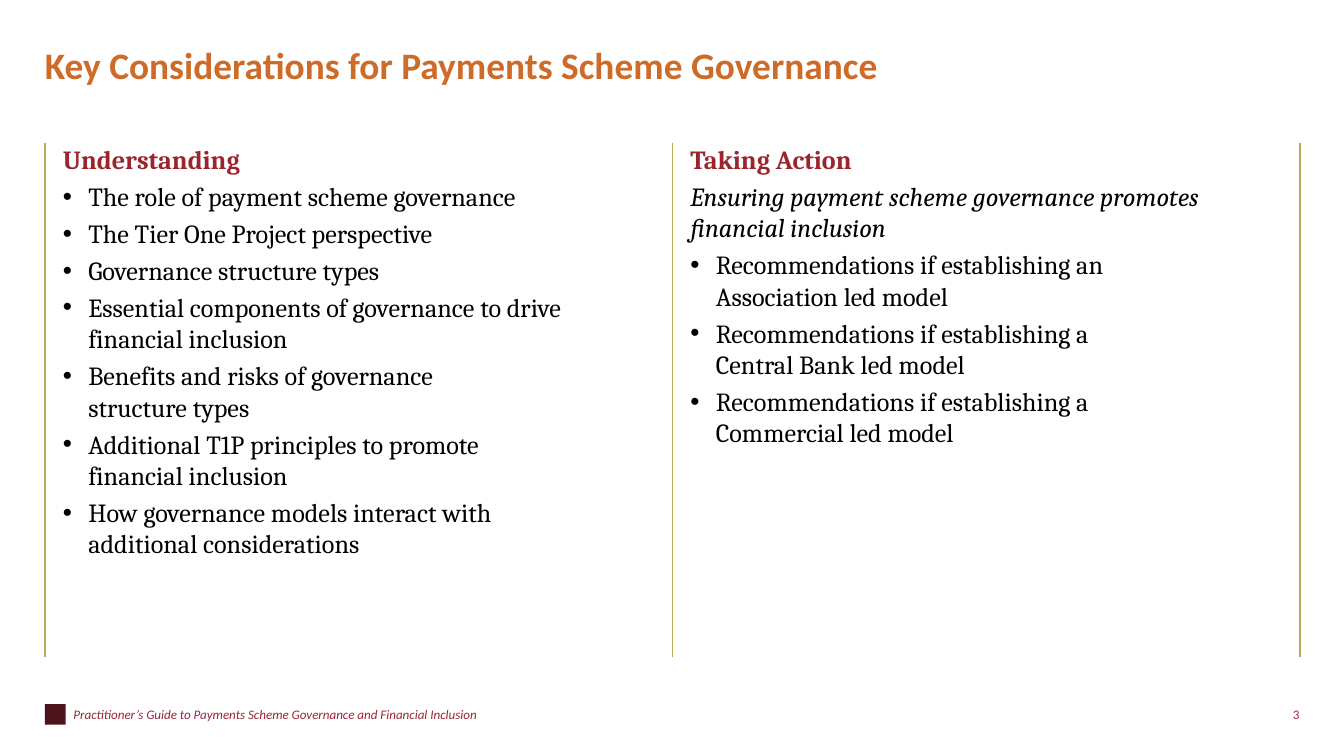
import pptx
import pptx.dml.color
import pptx.enum.shapes
import pptx.enum.text
import pptx.oxml
import pptx.oxml.ns
import pptx.util

Cm = pptx.util.Cm
Pt = pptx.util.Pt
ALIGN = pptx.enum.text.PP_ALIGN
ANCHOR = pptx.enum.text.MSO_ANCHOR


def rgb(hex_code):
    return pptx.dml.color.RGBColor.from_string(hex_code)


def write(paragraph, text, font="Calibri", size=7, color="98273B",
          bold=False, italic=False, align=ALIGN.LEFT, after=0, bullet=False):
    """Fill a paragraph; a newline in the text becomes a line break."""
    paragraph.text = text
    paragraph.alignment = align
    paragraph.space_after = Pt(after)
    for run in paragraph.runs:
        run.font.name = font
        run.font.size = Pt(size)
        run.font.bold = bold
        run.font.italic = italic
        run.font.color.rgb = rgb(color)
    if bullet:
        properties = paragraph._p.get_or_add_pPr()
        properties.set("marL", str(Cm(0.48)))
        properties.set("indent", str(-Cm(0.48)))
        for tag, key, value in (("a:buFont", "typeface", "Arial"),
                                ("a:buChar", "char", "•")):
            mark = pptx.oxml.parse_xml(
                f'<{tag} {pptx.oxml.ns.nsdecls("a")} {key}="{value}"/>')
            properties.append(mark)


class GuideSlide:
    title_color = "CE6B29"
    heading_color = "9B242D"
    body_color = "000000"
    rule_color = "BAAA58"
    square_color = "4C141D"
    body = dict(font="Cambria", size=14, after=3)

    def __init__(self, deck):
        self.slide = deck.slides.add_slide(deck.slide_layouts[6])

    def box(self, left, top, width, height, anchor=ANCHOR.MIDDLE,
            right=0, bottom=0):
        frame = self.slide.shapes.add_textbox(
            Cm(left), Cm(top), Cm(width), Cm(height)).text_frame
        frame.word_wrap = True
        frame.vertical_anchor = anchor
        frame.margin_left = frame.margin_top = 0
        frame.margin_right, frame.margin_bottom = Cm(right), Cm(bottom)
        return frame

    def label(self, text, left, top, width, height, **style):
        write(self.box(left, top, width, height).paragraphs[0], text, **style)

    def square(self, left, top, side):
        square = self.slide.shapes.add_shape(
            pptx.enum.shapes.MSO_SHAPE.RECTANGLE,
            Cm(left), Cm(top), Cm(side), Cm(side))
        square.shadow.inherit = False
        square.fill.solid()
        square.fill.fore_color.rgb = rgb(self.square_color)
        square.line.fill.background()

    def rule(self, x, top, height):
        line = self.slide.shapes.add_connector(
            pptx.enum.shapes.MSO_CONNECTOR.STRAIGHT,
            Cm(x), Cm(top), Cm(x), Cm(top + height))
        line.line.color.rgb = rgb(self.rule_color)
        line.line.width = Pt(1)
        line._element.spPr.append(pptx.oxml.parse_xml(
            f'<a:effectLst {pptx.oxml.ns.nsdecls("a")}/>'))

    def column(self, heading, lead, points, left, top, width, height):
        frame = self.box(left, top, width, height, ANCHOR.TOP,
                         right=0.25, bottom=0.13)
        write(frame.paragraphs[0], heading, color=self.heading_color,
              bold=True, **self.body)
        if lead:
            write(frame.add_paragraph(), lead, color=self.body_color,
                  italic=True, **self.body)
        for point in points:
            write(frame.add_paragraph(), point, color=self.body_color,
                  bullet=True, **self.body)


COLUMNS = [
    ("Understanding", None, [
        "The role of payment scheme governance",
        "The Tier One Project perspective",
        "Governance structure types",
        "Essential components of governance to drive financial inclusion",
        "Benefits and risks of governance \nstructure types",
        "Additional T1P principles to promote \nfinancial inclusion",
        "How governance models interact with additional considerations",
    ]),
    ("Taking Action",
     "Ensuring payment scheme governance promotes financial inclusion", [
         "Recommendations if establishing an Association led model",
         "Recommendations if establishing a \nCentral Bank led model",
         "Recommendations if establishing a Commercial led model",
     ]),
]
MARGIN, PITCH = 0.85, 11.86
TOP, HEIGHT = 2.71, 9.7


def main():
    deck = pptx.Presentation()
    deck.slide_width, deck.slide_height = Cm(25.4), Cm(14.29)
    page = GuideSlide(deck)

    # Title
    page.label("Key Considerations for Payments Scheme Governance",
               MARGIN, 0.79, 23.27, 0.86,
               size=20, color=page.title_color, bold=True)

    # Columns and the rules that bound them
    for index, (heading, lead, points) in enumerate(COLUMNS):
        page.column(heading, lead, points,
                    MARGIN + index * PITCH + 0.34, TOP, 10.13, HEIGHT)
    for index in range(len(COLUMNS) + 1):
        page.rule(MARGIN + index * PITCH, TOP, HEIGHT)

    # Footer
    page.square(MARGIN, 13.31, 0.39)
    page.label("Practitioner’s Guide to Payments Scheme Governance "
               "and Financial Inclusion", 1.39, 13.35, 8.59, 0.3, italic=True)
    page.label("3", 23.7, 13.35, 0.86, 0.3, align=ALIGN.RIGHT)

    deck.save("out.pptx")


if __name__ == "__main__":
    main()
